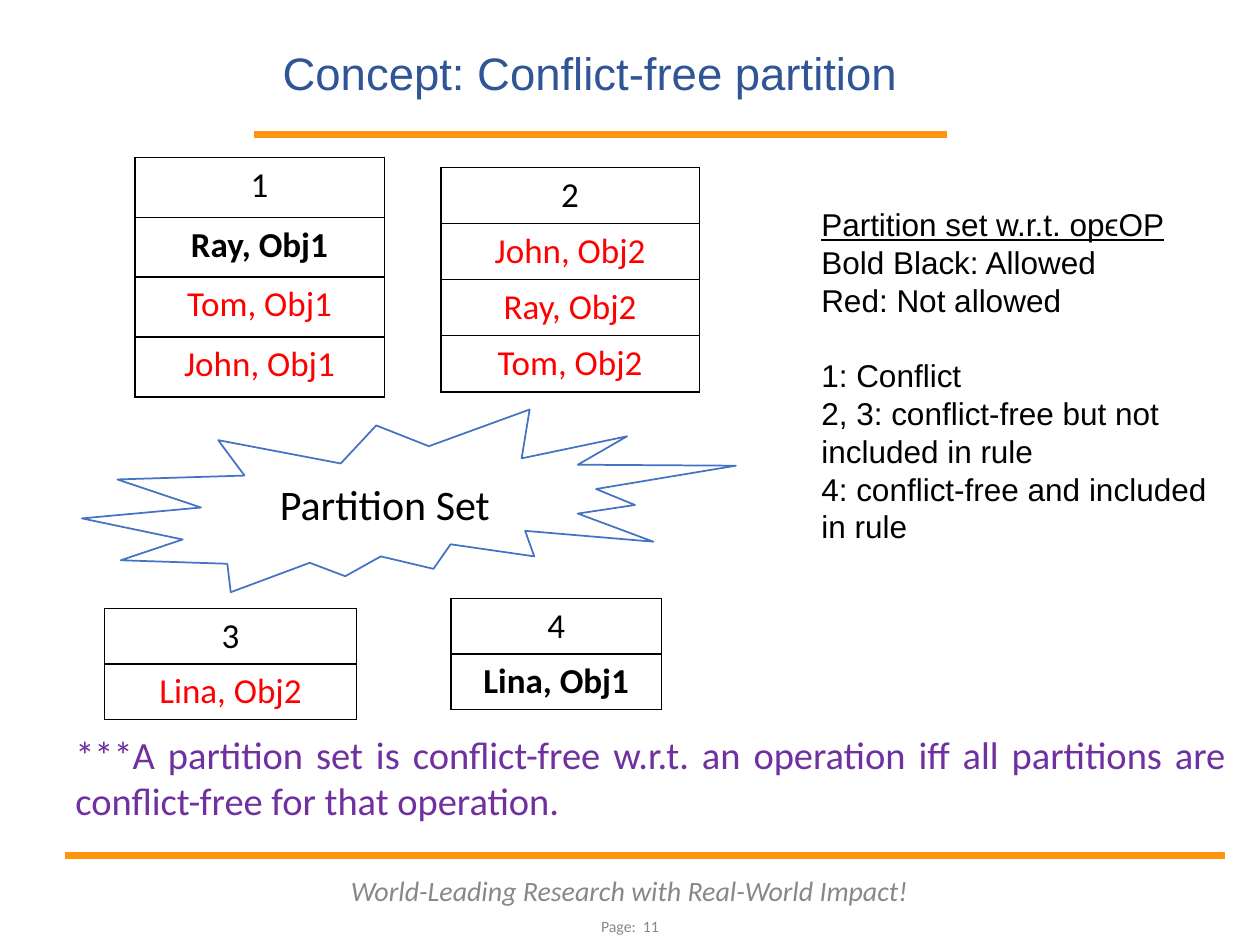
from lxml.etree import SubElement
from pptx import Presentation
from pptx.dml.color import RGBColor
from pptx.enum.shapes import MSO_CONNECTOR, MSO_SHAPE
from pptx.enum.text import MSO_ANCHOR, PP_ALIGN
from pptx.oxml.ns import qn
from pptx.util import Inches, Pt

BLACK = RGBColor(0x00, 0x00, 0x00)
WHITE = RGBColor(0xFF, 0xFF, 0xFF)
RED = RGBColor(0xFF, 0x00, 0x00)
BLUE = RGBColor(0x44, 0x72, 0xC4)
NAVY = RGBColor(0x2F, 0x55, 0x97)
PURPLE = RGBColor(0x70, 0x30, 0xA0)
ORANGE = RGBColor(0xFF, 0x95, 0x0E)
GRAY = RGBColor(0x88, 0x88, 0x88)


def write(paragraph, text, color, alignment=PP_ALIGN.CENTER, **formats):
    paragraph.alignment = alignment
    span = paragraph.add_run()
    span.text = text
    span.font.color.rgb = color
    for name, value in formats.items():
        setattr(span.font, name, value)


def add_box(page, left, top, width, height, anchor):
    box = page.shapes.add_textbox(Inches(left), Inches(top), Inches(width), Inches(height))
    box.text_frame.word_wrap = True
    box.text_frame.vertical_anchor = anchor
    return box.text_frame


deck = Presentation()
deck.slide_width = Inches(10)
deck.slide_height = Inches(7.5)
page = deck.slides.add_slide(deck.slide_layouts[5])

for left, right, height in [(2.02, 7.52, 1.07), (0.52, 9.72, 6.79)]:
    rule = page.shapes.add_connector(
        MSO_CONNECTOR.STRAIGHT, Inches(left), Inches(height), Inches(right), Inches(height))
    rule.line.color.rgb = ORANGE
    rule.line.width = Pt(4)
    SubElement(rule._element.spPr, qn("a:effectLst"))

title = page.shapes.title
title_place = {"left": 1.99, "top": 0.34, "width": 5.39, "height": 0.51}
for name, value in title_place.items():
    setattr(title, name, Inches(value))
title.text_frame.vertical_anchor = MSO_ANCHOR.BOTTOM
title.text_frame.paragraphs[0].line_spacing = 0.9
write(title.text_frame.paragraphs[0], "Concept: Conflict-free partition", NAVY,
      name="Arial", size=Pt(26))

motto = add_box(page, 2.58, 6.89, 4.83, 0.36, MSO_ANCHOR.MIDDLE)
write(motto.paragraphs[0], "World-Leading Research with Real-World Impact!", GRAY,
      name="Calibri", size=Pt(16), italic=True)
page_number = add_box(page, 4.06, 7.17, 1.88, 0.36, MSO_ANCHOR.MIDDLE)
write(page_number.paragraphs[0], "Page:  11", GRAY, name="Calibri", size=Pt(9))

note = add_box(page, 0.5, 5.75, 9.33, 0.75, MSO_ANCHOR.TOP)
write(note.paragraphs[0],
      "***A partition set is conflict-free w.r.t. an operation iff all partitions are "
      "conflict-free for that operation.",
      PURPLE, PP_ALIGN.JUSTIFY, name="Calibri", size=Pt(22))

allowed = {"Ray, Obj1", "Lina, Obj1"}
partitions = [
    (3.58, 4.75, 1.67, 0.44, ["4", "Lina, Obj1"]),
    (0.83, 4.83, 2, 0.44, ["3", "Lina, Obj2"]),
    (1.07, 1.25, 1.98, 0.475, ["1", "Ray, Obj1", "Tom, Obj1", "John, Obj1"]),
    (3.5, 1.33, 2.05, 0.445, ["2", "John, Obj2", "Ray, Obj2", "Tom, Obj2"]),
]
for left, top, width, row_height, entries in partitions:
    table = page.shapes.add_table(
        len(entries), 1, Inches(left), Inches(top),
        Inches(width), Inches(row_height * len(entries))).table
    table.first_row = False
    table.horz_banding = False
    for row, entry in enumerate(entries):
        cell = table.cell(row, 0)
        cell.margin_left = cell.margin_right = Inches(0.07)
        cell.margin_top = cell.margin_bottom = Inches(0.05)
        properties = cell._tc.get_or_add_tcPr()
        for side in ("lnL", "lnR", "lnT", "lnB"):
            border = SubElement(properties, qn(f"a:{side}"), w=str(Pt(0.96)))
            SubElement(SubElement(border, qn("a:solidFill")), qn("a:srgbClr"), val=str(BLACK))
        cell.fill.background()
        color = BLACK if row == 0 or entry in allowed else RED
        write(cell.text_frame.paragraphs[0], entry, color,
              name="Calibri", size=Pt(20), bold=entry in allowed)

burst = page.shapes.add_shape(
    MSO_SHAPE.EXPLOSION2, Inches(0.65), Inches(3.25), Inches(5.19), Inches(1.45))
burst.shadow.inherit = False
burst.fill.solid()
burst.fill.fore_color.rgb = WHITE
burst.line.color.rgb = BLUE
burst.line.width = Pt(1)
burst.text_frame.vertical_anchor = MSO_ANCHOR.MIDDLE
write(burst.text_frame.paragraphs[0], "Partition Set", BLACK, name="Calibri", size=Pt(24))

legend = add_box(page, 6.42, 1.58, 3.33, 3.43, MSO_ANCHOR.TOP)
legend_lines = [
    "Partition set w.r.t. opϵOP",
    "Bold Black: Allowed",
    "Red: Not allowed",
    "1: Conflict",
    "2, 3: conflict-free but not included in rule",
    "4: conflict-free and included in rule",
]
for index, line in enumerate(legend_lines):
    para = legend.add_paragraph() if index else legend.paragraphs[0]
    if line == "1: Conflict":
        para.space_before = Pt(21.5)
    write(para, line, BLACK, PP_ALIGN.LEFT, name="Arial", size=Pt(18), underline=index == 0)

deck.save("out.pptx")
